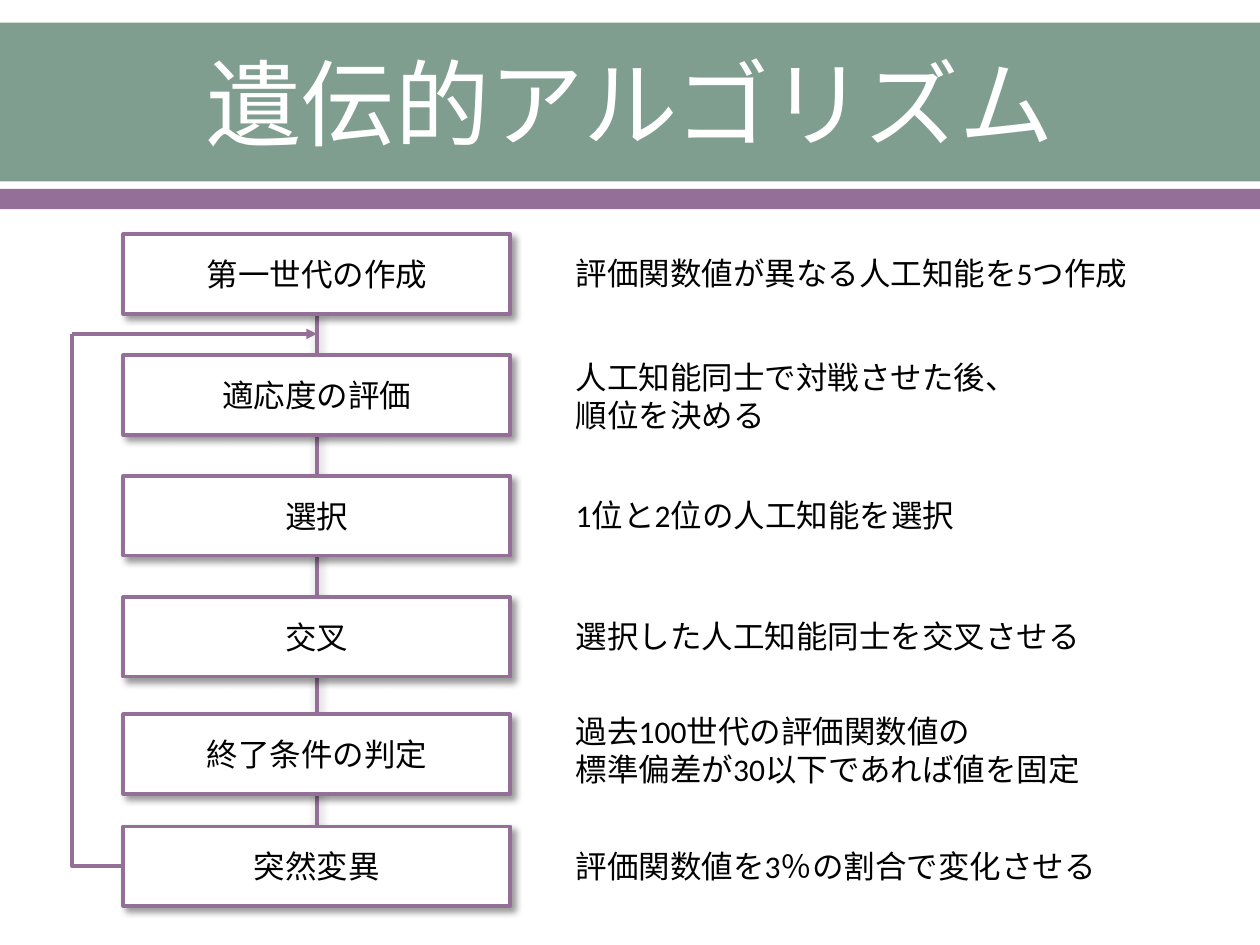
from lxml.etree import SubElement
from pptx import Presentation
from pptx.dml.color import RGBColor
from pptx.enum.shapes import MSO_CONNECTOR, MSO_SHAPE
from pptx.enum.text import MSO_ANCHOR, MSO_AUTO_SIZE, PP_ALIGN
from pptx.oxml.ns import qn
from pptx.util import Inches, Pt

COLORS = {"green": "809E90", "purple": "947098", "white": "FFFFFF", "black": "000000"}
FONT = "Calibri"
TITLE = "遺伝的アルゴリズム"

# step, box top, note lines, note top, note width
STEPS = [
    ("第一世代の作成", 1.86, ["評価関数値が異なる人工知能を5つ作成"], 1.97, 5.04),
    ("適応度の評価", 2.82, ["人工知能同士で対戦させた後、", "順位を決める"], 2.79, 4.33),
    ("選択", 3.78, ["1位と2位の人工知能を選択"], 3.89, 3.31),
    ("交叉", 4.74, ["選択した人工知能同士を交叉させる"], 4.85, 4.25),
    ("終了条件の判定", 5.67,
     ["過去100世代の評価関数値の", "標準偏差が30以下であれば値を固定"], 5.6, 4.25),
    ("突然変異", 6.56, ["評価関数値を3％の割合で変化させる"], 6.67, 4.41),
]
BANDS = [(0.18, 1.26, "green"), (1.5, 0.16, "purple")]  # top, height, colour

WIDTH, HEIGHT = 10, 7.5
BOX_LEFT, BOX_W, BOX_H = 0.98, 3.07, 0.63
BOX_MID = BOX_LEFT + BOX_W / 2
NOTE_LEFT, NOTE_LINE = 4.47, 0.31
LOOP_LEFT, LOOP_TOP = 0.57, 2.65


def rgb(name):
    return RGBColor.from_string(COLORS[name])


def write(shape, lines, size=18, color="black", align=PP_ALIGN.LEFT, anchor=MSO_ANCHOR.TOP):
    tf = shape.text_frame
    tf.word_wrap = True
    tf.vertical_anchor = anchor
    for i, line in enumerate(lines):
        p = tf.paragraphs[0] if i == 0 else tf.add_paragraph()
        p.alignment = align
        r = p.add_run()
        r.text = line
        r.font.name, r.font.size = FONT, Pt(size)
        r.font.color.rgb = rgb(color)


def add_shadow(effects, alpha, blur, dist, angle):
    shadow = SubElement(effects, qn("a:outerShdw"), blurRad=str(Pt(blur)), dist=str(Pt(dist)),
                        dir=str(angle * 60000), algn="tl", rotWithShape="0")
    color = SubElement(shadow, qn("a:srgbClr"), val=COLORS["black"])
    SubElement(color, qn("a:alpha"), val=str(alpha * 1000))


def add_rect(left, top, width, height, fill, line=None):
    sp = s.shapes.add_shape(MSO_SHAPE.RECTANGLE, *map(Inches, (left, top, width, height)))
    sp.shadow.inherit = False
    sp.fill.solid()
    sp.fill.fore_color.rgb = rgb(fill)
    if line:
        sp.line.color.rgb = rgb(line)
        sp.line.width = Pt(2.22)
    else:
        sp.line.fill.background()
    return sp


def add_line(x1, y1, x2, y2, kind=MSO_CONNECTOR.STRAIGHT, width=2):
    c = s.shapes.add_connector(kind, *map(Inches, (x1, y1, x2, y2)))
    c.line.color.rgb = rgb("purple")
    c.line.width = Pt(width)
    return c, SubElement(c._element.spPr, qn("a:effectLst"))


prs = Presentation()
prs.slide_width, prs.slide_height = Inches(WIDTH), Inches(HEIGHT)
s = prs.slides.add_slide(prs.slide_layouts[5])

# Title over two full-width bands
title = s.shapes.title
title.left, title.top, title.width, title.height = map(Inches, (0.5, 0.2, 9, 1.22))
write(title, [TITLE], size=54, color="white", align=PP_ALIGN.CENTER, anchor=MSO_ANCHOR.MIDDLE)
for top, height, color in BANDS:
    band = add_rect(0, top, WIDTH, height, color)
    title._element.addprevious(band._element)

# Spine behind the boxes
spine, effects = add_line(BOX_MID, STEPS[0][1] + BOX_H, BOX_MID, STEPS[-1][1], width=2.22)
add_shadow(effects, alpha=30, blur=5, dist=2, angle=60)

# Step boxes and their notes
boxes = []
for step, top, note, note_top, note_w in STEPS:
    box = add_rect(BOX_LEFT, top, BOX_W, BOX_H, "white", line="purple")
    add_shadow(box._element.spPr.find(qn("a:effectLst")), alpha=40, blur=4, dist=3, angle=45)
    write(box, [step], align=PP_ALIGN.CENTER, anchor=MSO_ANCHOR.MIDDLE)
    boxes.append(box)
    note_h = 0.1 + NOTE_LINE * len(note)
    tb = s.shapes.add_textbox(*map(Inches, (NOTE_LEFT, note_top, note_w, note_h)))
    write(tb, note)
    tb.text_frame.auto_size = MSO_AUTO_SIZE.SHAPE_TO_FIT_TEXT
spine.begin_connect(boxes[0], 2)
spine.end_connect(boxes[-1], 0)

# Loop from the last step back to the evaluation
loop, _ = add_line(BOX_LEFT, STEPS[-1][1] + BOX_H / 2, LOOP_LEFT, LOOP_TOP, MSO_CONNECTOR.ELBOW)
loop._element.spPr.find(qn("a:prstGeom")).set("prst", "bentConnector2")
loop.begin_connect(boxes[-1], 1)
arrow, _ = add_line(LOOP_LEFT, LOOP_TOP, BOX_MID, LOOP_TOP)
SubElement(arrow.line._get_or_add_ln(), qn("a:tailEnd"), type="triangle")

prs.save("out.pptx")
